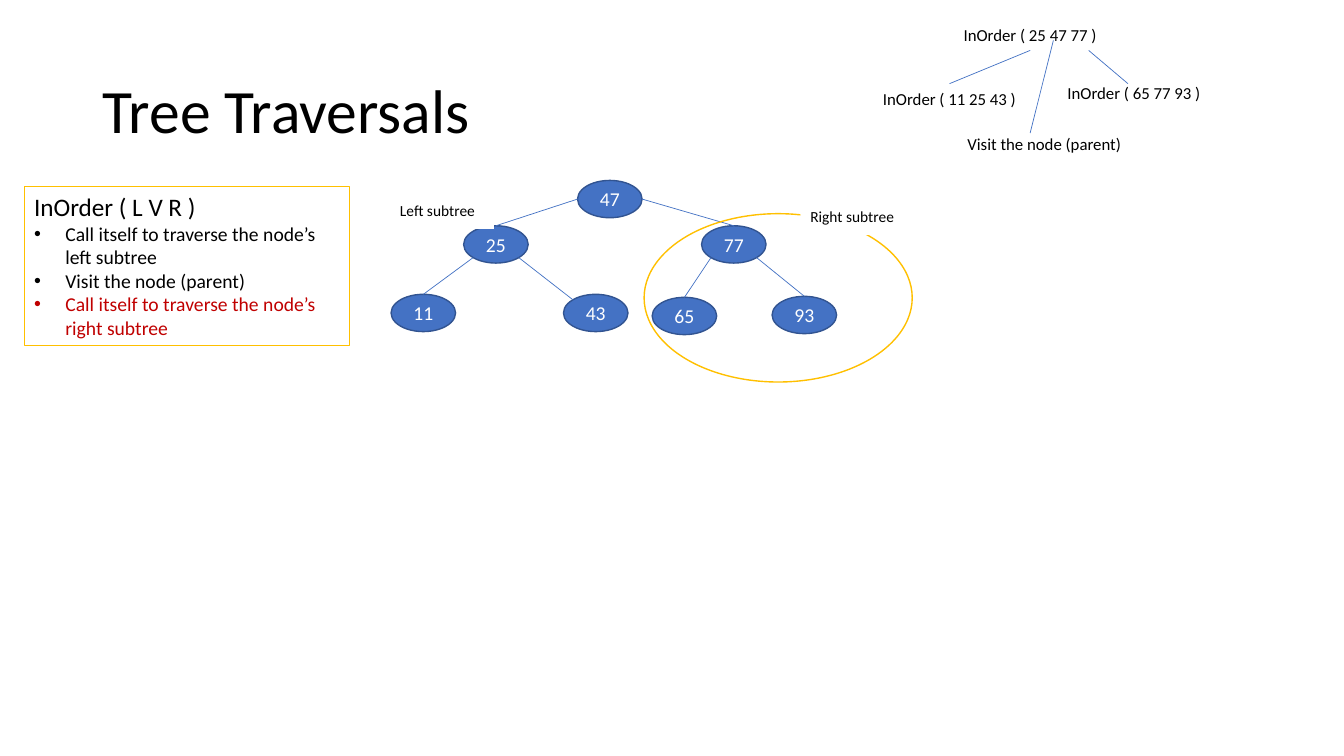
from dataclasses import dataclass
from math import sqrt

from lxml import etree
from pptx import Presentation
from pptx.dml.color import RGBColor
from pptx.enum.shapes import MSO_CONNECTOR, MSO_SHAPE
from pptx.enum.text import MSO_ANCHOR, MSO_AUTO_SIZE, PP_ALIGN
from pptx.oxml.ns import qn
from pptx.util import Inches, Pt

STRAIGHT = MSO_CONNECTOR.STRAIGHT
RECTANGLE, OVAL = MSO_SHAPE.RECTANGLE, MSO_SHAPE.OVAL
RING = MSO_SHAPE.FLOWCHART_CONNECTOR
TOP, MIDDLE = MSO_ANCHOR.TOP, MSO_ANCHOR.MIDDLE
LEFT, CENTER = PP_ALIGN.LEFT, PP_ALIGN.CENTER
GROW = MSO_AUTO_SIZE.SHAPE_TO_FIT_TEXT
TOP_SIDE, BOTTOM_SIDE = 0, 2

# Grid: square cells, ten to the inch
CELL = Inches(0.1)
COLUMNS, ROWS = 133.33, 75
NODE_W, NODE_H = 6.4, 3.7
CALL_W, CALL_H = 23.4, 3
DIAGONAL = sqrt(0.5)


@dataclass(frozen=True)
class Theme:
    font: str = "Calibri"
    ink: str = "000000"
    paper: str = "FFFFFF"
    blue: str = "4472C4"
    node_border: str = "325491"
    gold: str = "FFC000"
    current_step: str = "C00000"
    title: float = 44
    heading: float = 18
    body: float = 14
    call: float = 12
    label: float = 11
    edge_width: float = 0.5
    panel_width: float = 0.75
    outline_width: float = 1


@dataclass(frozen=True)
class Box:
    col: float
    row: float
    width: float
    height: float


@dataclass(frozen=True)
class Node:
    value: str
    col: float
    row: float


@dataclass(frozen=True)
class Edge:
    """Sites are (x, y) directions from a node's centre to its rim."""
    parent: str
    parent_site: tuple[float, float]
    child: str
    child_site: tuple[float, float] = (0, -1)


THEME = Theme()
LEFT_RIM, RIGHT_RIM = (-1, 0), (1, 0)
LOWER_LEFT, LOWER_RIGHT = (-DIAGONAL, DIAGONAL), (DIAGONAL, DIAGONAL)
UPPER_LEFT, TOP_RIM = (-DIAGONAL, -DIAGONAL), (0, -1)

NODES = [
    Node("47", 57.3, 17.9), Node("25", 46, 22.4), Node("77", 69.6, 22.4),
    Node("11", 38.8, 29.2), Node("43", 55.9, 29.2),
    Node("65", 64.7, 29.5), Node("93", 76.6, 29.4),
]
EDGES = [
    Edge("47", LEFT_RIM, "25"), Edge("47", RIGHT_RIM, "77"),
    Edge("25", LOWER_LEFT, "11"), Edge("25", LOWER_RIGHT, "43", UPPER_LEFT),
    Edge("77", LOWER_LEFT, "65"), Edge("77", LOWER_RIGHT, "93"),
]
STEPS = [
    ("Call itself to traverse the node’s left subtree", THEME.ink),
    ("Visit the node (parent)", THEME.ink),
    ("Call itself to traverse the node’s right subtree", THEME.current_step),
]


def cells(count: float) -> int:
    return round(count * CELL)


def frame(box: Box) -> tuple[int, int, int, int]:
    return cells(box.col), cells(box.row), cells(box.width), cells(box.height)


def add_run(paragraph, text: str, size: float, color: str) -> None:
    run = paragraph.add_run()
    run.text = text
    run.font.name = THEME.font
    run.font.size = Pt(size)
    run.font.color.rgb = RGBColor.from_string(color)


def write(shape, text: str, size: float, color: str = THEME.ink,
          align=LEFT, anchor=TOP):
    text_frame = shape.text_frame
    text_frame.word_wrap = True
    text_frame.vertical_anchor = anchor
    paragraph = text_frame.paragraphs[0]
    paragraph.alignment = align
    add_run(paragraph, text, size, color)
    return paragraph


def add_figure(slide, kind, box: Box, fill: str = "", line: str = "",
               width: float = THEME.outline_width):
    figure = slide.shapes.add_shape(kind, *frame(box))
    figure.shadow.inherit = False
    if fill:
        figure.fill.solid()
        figure.fill.fore_color.rgb = RGBColor.from_string(fill)
    else:
        figure.fill.background()
    if line:
        figure.line.color.rgb = RGBColor.from_string(line)
        figure.line.width = Pt(width)
    else:
        figure.line.fill.background()
    return figure


def add_edge(slide, start: tuple[float, float], end: tuple[float, float]):
    edge = slide.shapes.add_connector(
        STRAIGHT, *(cells(value) for value in (*start, *end)))
    edge.line.color.rgb = RGBColor.from_string(THEME.blue)
    edge.line.width = Pt(THEME.edge_width)
    etree.SubElement(edge._element.spPr, qn("a:effectLst"))
    return edge


def add_call(slide, text: str, col: float, row: float):
    call = slide.shapes.add_textbox(*frame(Box(col, row, CALL_W, CALL_H)))
    write(call, text, THEME.call, align=CENTER)
    call.text_frame.auto_size = GROW
    return call


def add_label(slide, text: str, box: Box) -> None:
    label = add_figure(slide, RECTANGLE, box, fill=THEME.paper)
    write(label, text, THEME.label).space_after = Pt(8)


def add_step(panel, text: str, color: str) -> None:
    step = panel.text_frame.add_paragraph()
    step.alignment = LEFT
    add_run(step, text, THEME.body, color)
    properties = step._p.get_or_add_pPr()
    indent = cells(3.1)
    properties.set("marL", str(indent))
    properties.set("indent", str(-indent))
    etree.SubElement(properties, qn("a:buFont"), typeface="Arial")
    etree.SubElement(properties, qn("a:buChar"), char="•")


def rim_point(node: Node, site: tuple[float, float]) -> tuple[float, float]:
    return (node.col + NODE_W / 2 * (1 + site[0]),
            node.row + NODE_H / 2 * (1 + site[1]))


def add_tree(slide) -> None:
    ovals = {}
    for node in NODES:
        oval = add_figure(slide, OVAL, Box(node.col, node.row, NODE_W, NODE_H),
                          THEME.blue, THEME.node_border)
        write(oval, node.value, THEME.body, THEME.paper, CENTER, MIDDLE)
        ovals[node.value] = oval
    places = {node.value: node for node in NODES}
    for edge in EDGES:
        line = add_edge(slide, rim_point(places[edge.parent], edge.parent_site),
                        rim_point(places[edge.child], edge.child_site))
        if edge.child_site == TOP_RIM:
            line.end_connect(ovals[edge.child], TOP_SIDE)


def main() -> None:
    deck = Presentation()
    deck.slide_width, deck.slide_height = cells(COLUMNS), cells(ROWS)
    slide = deck.slides.add_slide(deck.slide_layouts[6])

    # Title and tree
    title = slide.shapes.add_textbox(*frame(Box(9.2, 4, 115, 14.5)))
    write(title, "Tree Traversals", THEME.title, anchor=MIDDLE).line_spacing = 0.9
    add_tree(slide)

    # Steps of the traversal
    panel = add_figure(slide, RECTANGLE, Box(2.4, 18.5, 32.3, 15.8),
                       line=THEME.gold, width=THEME.panel_width)
    write(panel, "InOrder ( L V R )", THEME.heading)
    for text, color in STEPS:
        add_step(panel, text, color)
    panel.text_frame.auto_size = GROW
    add_label(slide, "Left subtree", Box(38.7, 19.5, 10.3, 3.2))

    # Recursive calls
    root_call = add_call(slide, "InOrder ( 25 47 77 )", 90.5, 2)
    left_call = add_call(slide, "InOrder ( 11 25 43 )", 82.5, 8.3)
    to_left = add_edge(slide, (102.2, 5), (94.2, 8.3))
    to_left.begin_connect(root_call, BOTTOM_SIDE)
    to_left.end_connect(left_call, TOP_SIDE)
    add_edge(slide, (104.5, 4), (102.2, 13.2))
    add_call(slide, "Visit the node (parent)", 91.9, 12.8)
    add_edge(slide, (108, 5), (111.9, 8.3))
    add_call(slide, "InOrder ( 65 77 93 )", 100.8, 7.7)

    # Highlighted right subtree
    add_figure(slide, RING, Box(63.9, 21.2, 26.6, 16.7), line=THEME.gold)
    add_label(slide, "Right subtree", Box(79.4, 20.1, 11.6, 3.2))

    deck.save("out.pptx")


if __name__ == "__main__":
    main()
